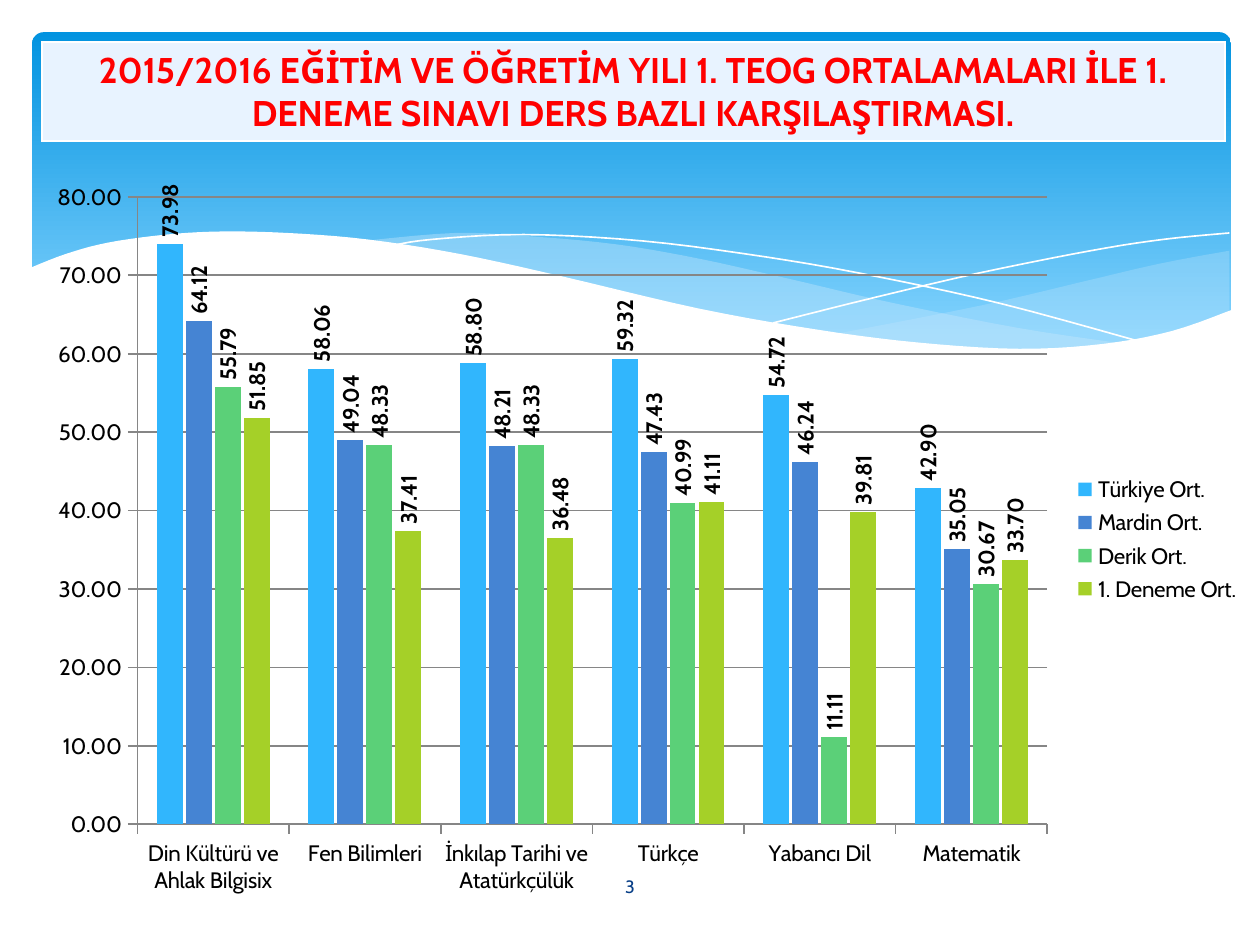
from dataclasses import dataclass
from typing import Any

from lxml import etree
from pptx import Presentation
from pptx import util as u
from pptx.chart.data import CategoryChartData
from pptx.dml.color import RGBColor
from pptx.enum import chart as ch, shapes as sh, text as tx
from pptx.oxml import parse_xml
from pptx.oxml.ns import nsdecls, qn

Point = tuple[float, float]
FONT = "Cabin"
HEX = {
    "white": "FFFFFF", "black": "000000", "red": "FF0000", "navy": "073E87",
    "pale": "E8F3FF", "deep": "0293E0", "light": "83D3FE", "mist": "C6E7FC",
    "grid": "868686", "sky": "31B6FD", "blue": "4584D3",
    "green": "5BD078", "lime": "A5D028",
}


@dataclass
class Wave:
    """Outline of smoothed edges; a wave without fill is an open line."""
    edges: list[list[Point]]
    fill: str = ""
    alpha: int = 100


@dataclass
class Series:
    name: str
    color: str
    vals: list[float]


WAVES = [
    Wave([[(7.65, 1.56), (7.22, 1.64), (6.75, 1.75), (6.11, 1.9), (5.19, 2.08)],
          [(5.19, 2.08), (5.74, 2.15), (6.3, 2.18), (6.84, 2.15), (7.28, 2.07),
           (7.65, 1.94)]], "mist", 29),
    Wave([[(7, 2.14), (6.33, 2.04), (5.53, 1.88), (4.93, 1.74), (4.35, 1.61),
           (3.83, 1.52), (3.29, 1.47), (2.83, 1.45), (2.25, 1.5)],
          [(2.25, 1.5), (2.84, 1.59), (3.52, 1.74), (4.15, 1.88), (4.85, 2.03),
           (5.45, 2.12), (6.06, 2.18), (6.57, 2.18), (7, 2.14)]], "mist", 40),
    Wave([[(2.43, 1.53), (2.69, 1.49), (3.26, 1.46), (4, 1.5), (4.77, 1.6),
           (5.45, 1.72), (6.23, 1.89), (7.11, 2.13)]]),
    Wave([[(4.81, 2.01), (5.45, 1.85), (6.09, 1.7), (6.79, 1.56), (7.24, 1.49),
           (7.65, 1.45)]]),
    Wave([[(7.66, 1.93), (7.29, 2.06), (6.86, 2.14), (6.34, 2.17), (5.7, 2.13),
           (5.08, 2.05), (4.35, 1.92), (3.5, 1.72), (2.86, 1.58), (2.29, 1.49),
           (1.8, 1.45), (1.38, 1.44), (1.03, 1.46), (0.67, 1.51), (0.41, 1.58),
           (0.18, 1.67)],
          [(0.18, 2.58), (7.66, 2.58)]], "white"),
]
LESSONS = ["Din Kültürü ve Ahlak Bilgisix", "Fen Bilimleri",
           "İnkılap Tarihi ve Atatürkçülük", "Türkçe", "Yabancı Dil", "Matematik"]
SERIES = [
    Series("Türkiye Ort.", "sky", [73.98, 58.06, 58.8, 59.32, 54.72, 42.9]),
    Series("Mardin Ort.", "blue", [64.12, 49.04, 48.21, 47.43, 46.24, 35.05]),
    Series("Derik Ort.", "green", [55.79, 48.33, 48.33, 40.99, 11.11, 30.67]),
    Series("1. Deneme Ort.", "lime", [51.85, 37.41, 36.48, 41.11, 39.81, 33.7]),
]
TITLE = ("2015/2016 EĞİTİM VE ÖĞRETİM YILI 1. TEOG ORTALAMALARI İLE 1. "
         "DENEME SINAVI DERS BAZLI KARŞILAŞTIRMASI.")


def rgb(name: str) -> RGBColor:
    return RGBColor.from_string(HEX[name])


def box(*sides: float) -> list[int]:
    return [u.Inches(side) for side in sides]


def put(item: Any, **vals: Any) -> None:
    for key, val in vals.items():
        setattr(item, key, val)


def style(font: Any, size: int, color: str, bold: bool = False) -> None:
    put(font, name=FONT, size=u.Pt(size), bold=bold)
    font.color.rgb = rgb(color)


def paint(fill: Any, color: str) -> None:
    fill.solid()
    fill.fore_color.rgb = rgb(color)


def smooth(knots: list[Point], steps: int = 5) -> list[Point]:
    """Catmull-Rom curve through the knots."""
    if len(knots) < 3:
        return knots
    ends = [knots[0], *knots, knots[-1]]
    curve = [knots[0]]
    for a, b, c, d in zip(ends, ends[1:], ends[2:], ends[3:]):
        for step in range(1, steps + 1):
            t = step / steps
            curve.append(tuple(
                (2 * q + (r - p) * t + (2 * p - 5 * q + 4 * r - s) * t ** 2
                 + (3 * q - p - 3 * r + s) * t ** 3) / 2
                for p, q, r, s in zip(a, b, c, d)))
    return curve


def draw_sky(slide: Any) -> None:
    sky = slide.shapes.add_shape(sh.MSO_SHAPE.ROUNDED_RECTANGLE,
                                 *box(0.2, 0.2, 7.46, 2.12))
    sky.adjustments[0] = 0.034
    sky.shadow.inherit = False
    sky.line.fill.background()
    sky.fill.gradient()
    sky.fill.gradient_angle = 270
    for stop, place, color in zip(sky.fill.gradient_stops, (0, 0.9), ("deep", "light")):
        stop.position = place
        stop.color.rgb = rgb(color)


def draw_wave(slide: Any, wave: Wave) -> None:
    spots = [box(*spot) for edge in wave.edges for spot in smooth(edge)]
    pen = slide.shapes.build_freeform(*spots[0])
    pen.add_line_segments(spots[1:], close=bool(wave.fill))
    form = pen.convert_to_shape()
    form.shadow.inherit = False
    if not wave.fill:
        form.fill.background()
        form.line.color.rgb = rgb("white")
        form.line.width = u.Pt(0)
        return
    form.line.fill.background()
    paint(form.fill, wave.fill)
    if wave.alpha < 100:
        tint = form.fill._xPr.find(".//" + qn("a:srgbClr"))
        etree.SubElement(tint, qn("a:alpha"), val=str(wave.alpha * 1000))


def draw_page(slide: Any) -> None:
    frame = slide.shapes.add_textbox(*box(3.42, 5.36, 1, 0.31)).text_frame
    put(frame, word_wrap=True, vertical_anchor=tx.MSO_ANCHOR.MIDDLE, text="3")
    line = frame.paragraphs[0]
    line.alignment = tx.PP_ALIGN.CENTER
    style(line.runs[0].font, 8, "navy")


def draw_title(slide: Any) -> None:
    table = slide.shapes.add_table(1, 1, *box(0.26, 0.26, 7.36, 0.62)).table
    cell = table.cell(0, 0)
    edge = u.Inches(0.01)
    put(cell, text=TITLE, vertical_anchor=tx.MSO_ANCHOR.MIDDLE, margin_left=edge,
        margin_right=edge, margin_top=edge, margin_bottom=0)
    line = cell.text_frame.paragraphs[0]
    line.alignment = tx.PP_ALIGN.CENTER
    style(line.runs[0].font, 16, "red", True)
    # Borders come before the fill in the cell properties
    for side in "LRTB":
        cell._tc.get_or_add_tcPr().append(parse_xml(
            f'<a:ln{side} {nsdecls("a")} w="12700"><a:solidFill>'
            f'<a:srgbClr val="{HEX["white"]}"/></a:solidFill></a:ln{side}>'))
    paint(cell.fill, "pale")


def draw_chart(slide: Any) -> None:
    data = CategoryChartData(number_format="0.00")
    data.categories = LESSONS
    for row in SERIES:
        data.add_series(row.name, row.vals)
    chart = slide.shapes.add_chart(ch.XL_CHART_TYPE.COLUMN_CLUSTERED,
                                   *box(0.2, 1.05, 7.62, 4.61), data).chart
    style(chart.font, 10, "black")
    put(chart, has_title=False, has_legend=True)
    put(chart.legend, position=ch.XL_LEGEND_POSITION.RIGHT, include_in_layout=False)
    plot = chart.plots[0]
    put(plot, gap_width=150, overlap=-12, vary_by_categories=False)

    # Axes and grid
    scale = chart.value_axis
    put(scale, minimum_scale=0, maximum_scale=80, major_unit=10,
        has_major_gridlines=True)
    put(scale.tick_labels, number_format="0.00", number_format_is_linked=False)
    for axis in (scale, chart.category_axis):
        axis.major_tick_mark = ch.XL_TICK_MARK.OUTSIDE
        axis.format.line.color.rgb = rgb("grid")
    scale.major_gridlines.format.line.color.rgb = rgb("grid")

    # Columns with upright labels
    for bars, row in zip(plot.series, SERIES):
        paint(bars.format.fill, row.color)
        tags = bars.data_labels
        put(tags, show_value=True, number_format="0.00", number_format_is_linked=False,
            position=ch.XL_LABEL_POSITION.OUTSIDE_END)
        style(tags.font, 10, "black", True)
        turn = tags._element.find(".//" + qn("a:bodyPr"))
        put_xml = {"rot": "-5400000", "vert": "horz"}
        turn.attrib.update(put_xml)

    # Inner plot area as shares of the chart
    area = chart._chartSpace.find(".//" + qn("c:plotArea"))
    for old in area.findall(qn("c:layout")):
        area.remove(old)
    rules = {"layoutTarget": "inner", "xMode": "edge", "yMode": "edge",
             "x": 0.086, "y": 0.038, "w": 0.743, "h": 0.847}
    marks = "".join(f'<c:{key} val="{val}"/>' for key, val in rules.items())
    area.insert(0, parse_xml(f'<c:layout {nsdecls("c")}><c:manualLayout>{marks}'
                             '</c:manualLayout></c:layout>'))


def main() -> None:
    deck = Presentation()
    put(deck, slide_width=u.Inches(7.84), slide_height=u.Inches(5.88))
    slide = deck.slides.add_slide(deck.slide_layouts[6])
    draw_sky(slide)
    for wave in WAVES:
        draw_wave(slide, wave)
    draw_page(slide)
    draw_title(slide)
    draw_chart(slide)
    deck.save("out.pptx")


if __name__ == "__main__":
    main()
